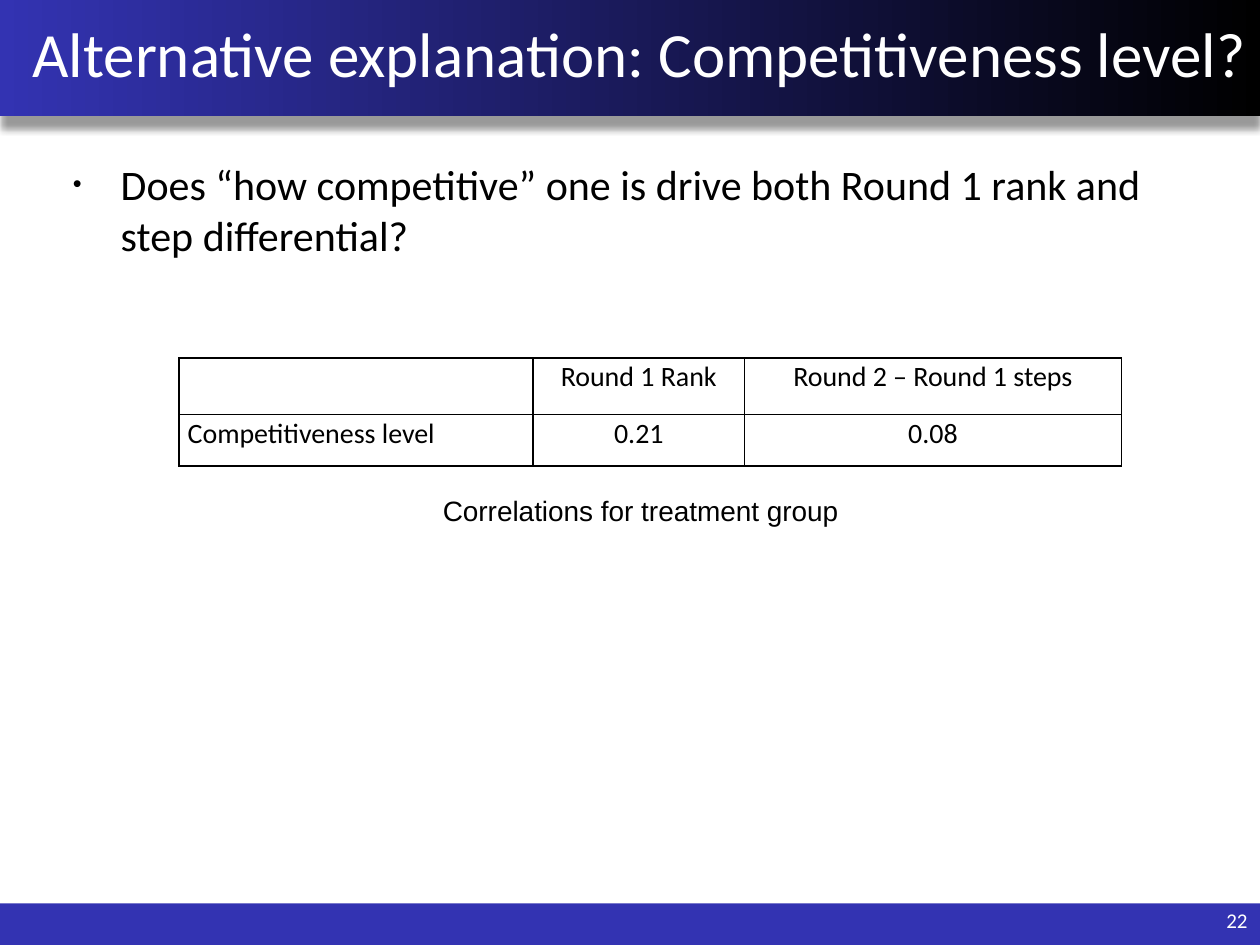
"""Build the competitiveness slide with its correlation table."""
from lxml import etree
from pptx import Presentation
from pptx.dml.color import RGBColor
from pptx.enum.shapes import MSO_SHAPE
from pptx.enum.text import MSO_ANCHOR, PP_ALIGN
from pptx.oxml import parse_xml
from pptx.oxml.ns import nsdecls, qn
from pptx.util import Inches, Pt

RECT = MSO_SHAPE.RECTANGLE
TOP, MIDDLE = MSO_ANCHOR.TOP, MSO_ANCHOR.MIDDLE
LEFT, CENTER, RIGHT = PP_ALIGN.LEFT, PP_ALIGN.CENTER, PP_ALIGN.RIGHT
BLACK = RGBColor(0x00, 0x00, 0x00)
WHITE = RGBColor(0xFF, 0xFF, 0xFF)
BLUE = RGBColor(0x33, 0x33, 0xB2)

TITLE = "Alternative explanation: Competitiveness level?"
POINT = "Does “how competitive” one is drive both Round 1 rank and step differential?"
ROWS = [
    ["", "Round 1 Rank", "Round 2 – Round 1 steps"],
    ["Competitiveness level", "0.21", "0.08"],
]
NOTE = "Correlations for treatment group"
PAGE = "22"

WIDE, HIGH = 10, 7.5
HEAD, FOOT = 0.92, 0.33
COLS, TALL = [2.81, 1.68, 2.99], [0.45, 0.41]
GRID_X, GRID_Y = 1.42, 2.84


def write(frame, text, size=16, color=BLACK, face="Calibri", align=LEFT,
          anchor=TOP, indent=(0, 0), bullet=None, space=None):
    frame.word_wrap = True
    frame.vertical_anchor = anchor
    para = frame.paragraphs[0]
    props = para._p.get_or_add_pPr()
    for key, val in zip(("marL", "indent"), indent):
        props.set(key, str(Inches(val)))
    if bullet:
        etree.SubElement(props, qn("a:buSzPct")).set("val", "60000")
        etree.SubElement(props, qn("a:buFont")).set("typeface", "Arial")
        etree.SubElement(props, qn("a:buChar")).set("char", bullet)
    para.alignment = align
    if space:
        para.line_spacing = space
    run = para.add_run()
    run.text = text
    run.font.size = Pt(size)
    run.font.name = face
    run.font.color.rgb = color


def box(slide, area, text, **form):
    shape = slide.shapes.add_textbox(*map(Inches, area))
    write(shape.text_frame, text, **form)


def band(slide, top, height):
    shape = slide.shapes.add_shape(RECT, 0, Inches(top), Inches(WIDE), Inches(height))
    shape.shadow.inherit = False
    shape.line.fill.background()
    shape.fill.solid()
    shape.fill.fore_color.rgb = BLUE
    return shape


def header(slide):
    shape = band(slide, 0, HEAD)
    shape.fill.gradient()
    shape.fill.gradient_angle = 180
    for stop, color, place in zip(shape.fill.gradient_stops, (BLACK, BLUE), (0, 1)):
        stop.color.rgb = color
        stop.position = place
    glow = shape._element.spPr.find(qn("a:effectLst"))
    glow.append(parse_xml(
        f'<a:outerShdw {nsdecls("a")} blurRad="{Pt(4)}" dist="{Pt(7)}" dir="5400000" '
        'algn="t" rotWithShape="0"><a:srgbClr val="000000">'
        '<a:alpha val="40000"/></a:srgbClr></a:outerShdw>'))


def border(cell):
    props = cell._tc.get_or_add_tcPr()
    for i, side in enumerate(("lnL", "lnR", "lnT", "lnB")):
        props.insert(i, parse_xml(
            f'<a:{side} {nsdecls("a")} w="{Pt(1)}"><a:solidFill>'
            f'<a:srgbClr val="{BLACK}"/></a:solidFill></a:{side}>'))


def grid(slide):
    area = GRID_X, GRID_Y, sum(COLS), sum(TALL)
    table = slide.shapes.add_table(len(ROWS), len(COLS), *map(Inches, area)).table
    table.first_row = table.horz_banding = False
    for col, width in zip(table.columns, COLS):
        col.width = Inches(width)
    for r, (row, height) in enumerate(zip(ROWS, TALL)):
        table.rows[r].height = Inches(height)
        for c, text in enumerate(row):
            cell = table.cell(r, c)
            cell.fill.background()
            cell.margin_left = cell.margin_right = Inches(0.07)
            cell.margin_top = cell.margin_bottom = 0
            write(cell.text_frame, text, align=CENTER if c else LEFT, space=1.07)
            border(cell)


def main():
    deck = Presentation()
    deck.slide_width, deck.slide_height = Inches(WIDE), Inches(HIGH)
    slide = deck.slides.add_slide(deck.slide_layouts[6])
    band(slide, HIGH - FOOT, FOOT)
    header(slide)
    box(slide, (0.48, 1.21, 8.78, 6.17), POINT, size=24, indent=(0.38, -0.38), bullet="•")
    box(slide, (-0.04, 0, 10.2, 0.83), TITLE, size=36, color=WHITE,
        anchor=MIDDLE, indent=(0.2, 0))
    box(slide, (8.83, 7.1, 1.17, 0.4), PAGE, size=12, color=WHITE,
        align=RIGHT, anchor=MIDDLE)
    grid(slide)
    box(slide, (3.36, 3.87, 3.45, 0.37), NOTE, face="Arial", align=CENTER)
    deck.save("out.pptx")


if __name__ == "__main__":
    main()
